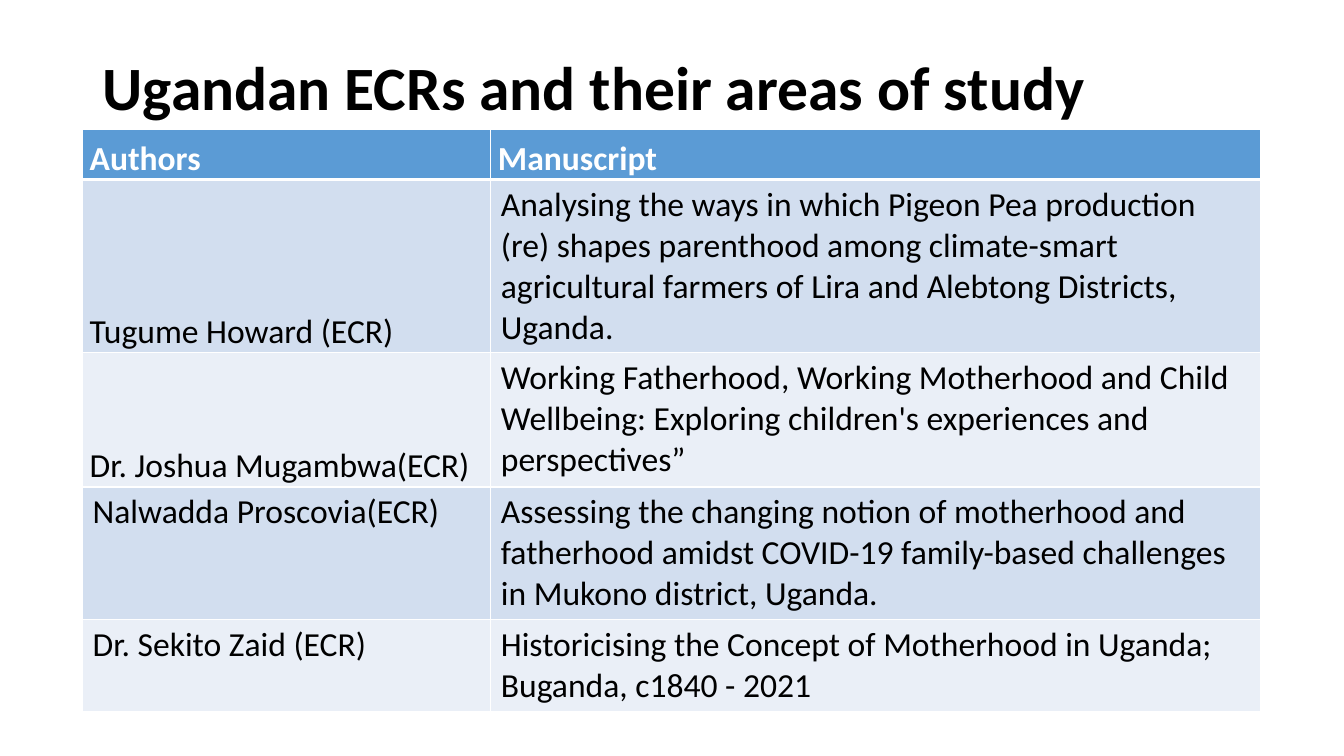
from dataclasses import dataclass

from lxml import etree
from pptx import Presentation
from pptx import util as u
from pptx.dml.color import RGBColor
from pptx.enum import text
from pptx.oxml import ns


@dataclass(frozen=True)
class Theme:
    font: str = "Calibri"
    title_size: int = 44
    table_size: int = 24
    ink: str = "000000"
    white: str = "FFFFFF"
    header: str = "5B9BD5"
    bands: tuple = ("D2DEEF", "EAEFF7")


THEME = Theme()
TITLE = "Ugandan ECRs and their areas of study"
# Author, manuscript, row height in cm, whether the author sits at the bottom
ROWS = [
    ("Authors", "Manuscript", 1.27, True),
    ("Tugume Howard (ECR)",
     "Analysing the ways in which Pigeon Pea production (re) shapes parenthood "
     "among climate-smart agricultural farmers of Lira and Alebtong Districts, Uganda.",
     4.37, True),
    ("Dr. Joshua Mugambwa(ECR)",
     "Working Fatherhood, Working Motherhood and Child Wellbeing: "
     "Exploring children's experiences and perspectives”", 3.38, True),
    ("Nalwadda Proscovia(ECR)",
     "Assessing the changing notion of motherhood and fatherhood amidst COVID-19 "
     "family-based challenges in Mukono district, Uganda.", 3.34, False),
    ("Dr. Sekito Zaid (ECR)",
     "Historicising the Concept of Motherhood in Uganda; Buganda, c1840 - 2021",
     2.32, False),
]


def apply(obj, values):
    for name, value in values.items():
        setattr(obj, name, value)


def write(p, words, size, color, bold, spacing):
    p.line_spacing = spacing
    r = p.add_run()
    r.text = words
    apply(r.font, {"name": THEME.font, "size": u.Pt(size), "bold": bold})
    r.font.color.rgb = RGBColor.from_string(color)


def set_borders(cell, widths):
    """Draw white cell borders; widths are points by side."""
    tc_pr = cell._tc.get_or_add_tcPr()
    for i, (side, width) in enumerate(widths.items()):
        ln = etree.Element(ns.qn(f"a:ln{side}"), w=str(u.Pt(width)))
        fill = etree.SubElement(ln, ns.qn("a:solidFill"))
        etree.SubElement(fill, ns.qn("a:srgbClr"), val=THEME.white)
        tc_pr.insert(i, ln)


def add_title(s, left, top, width, height):
    tf = s.shapes.add_textbox(left, top, width, height).text_frame
    apply(tf, {"word_wrap": True, "vertical_anchor": text.MSO_ANCHOR.MIDDLE})
    write(tf.paragraphs[0], TITLE, THEME.title_size, THEME.ink, True, 0.9)


def add_study_table(s, left, top, width, height):
    table = s.shapes.add_table(len(ROWS), 2, left, top, width, height).table
    author_width = u.Cm(10.29)
    table.columns[0].width = author_width
    table.columns[1].width = width - author_width

    for i, (author, manuscript, row_height, low) in enumerate(ROWS):
        table.rows[i].height = u.Cm(row_height)
        head = i == 0
        fill = THEME.header if head else THEME.bands[(i - 1) % 2]
        for j, words in enumerate((author, manuscript)):
            cell = table.cell(i, j)
            cell.fill.solid()
            cell.fill.fore_color.rgb = RGBColor.from_string(fill)
            tight = head or (low and j == 0)
            if tight:
                apply(cell, {"vertical_anchor": text.MSO_ANCHOR.BOTTOM,
                             "margin_left": u.Cm(0.18), "margin_right": u.Cm(0.18),
                             "margin_top": 0, "margin_bottom": 0})
            write(cell.text_frame.paragraphs[0], words, THEME.table_size,
                  THEME.white if head else THEME.ink, head, 1.07 if tight else 1.0)
            set_borders(cell, {"L": 1, "R": 1, "T": 3 if i == 1 else 1,
                               "B": 3 if head else 1})


def main():
    prs = Presentation()
    apply(prs, {"slide_width": u.Cm(33.87), "slide_height": u.Cm(19.05)})
    s = prs.slides.add_slide(prs.slide_layouts[6])
    # Heading
    add_title(s, u.Cm(2.34), u.Cm(1.02), u.Cm(27.23), u.Cm(2.54))
    # Authors and manuscripts
    add_study_table(s, u.Cm(2.08), u.Cm(3.25), u.Cm(29.69),
                    u.Cm(sum(row[2] for row in ROWS)))
    prs.save("out.pptx")


if __name__ == "__main__":
    main()
